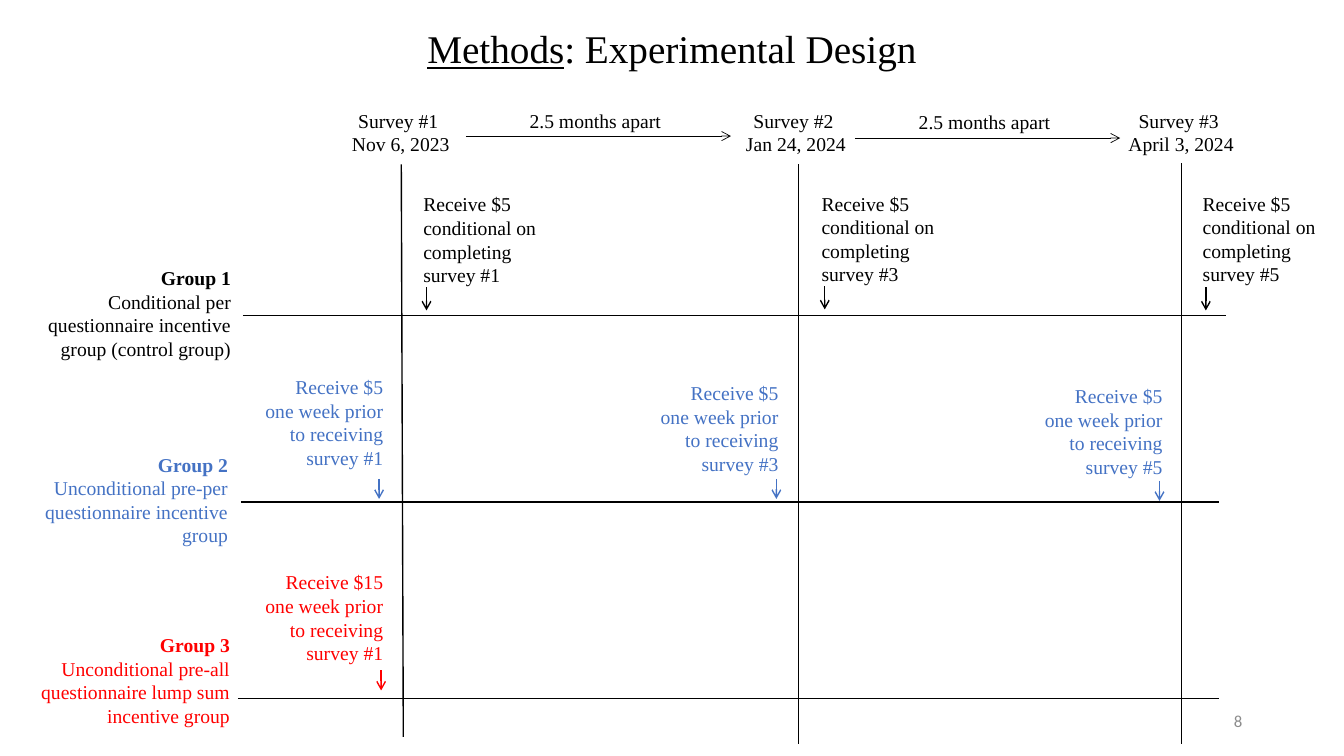
"""Build the experimental design slide: three surveys crossed with three incentive groups."""
from lxml.etree import SubElement
from pptx import Presentation
from pptx.dml.color import RGBColor
from pptx.enum.shapes import MSO_CONNECTOR as Connector
from pptx.enum.text import MSO_ANCHOR as Anchor, MSO_AUTO_SIZE as AutoSize, PP_ALIGN as Align
from pptx.oxml.ns import qn
from pptx.util import Inches, Pt

BLACK = RGBColor(0x00, 0x00, 0x00)
BLUE = RGBColor(0x44, 0x72, 0xC4)
RED = RGBColor(0xFF, 0x00, 0x00)
GRAY = RGBColor(0x8C, 0x8C, 0x8C)
SERIF = "Times New Roman"

SURVEYS = [
    ("Survey #1 ", "Nov 6, 2023", 3.29, 1.37, (4, 7.31), (3.98, 1.63)),
    ("Survey #2 ", "Jan 24, 2024", 7.21, 1.37, (7.92, 7.38), (7.92, 1.63)),
    ("Survey #3 ", "April 3, 2024", 10.95, 1.53, (11.72, 7.38), (11.72, 1.62)),
]
GROUPS = [
    ("Group 1", "Conditional per questionnaire incentive group (control group)",
     BLACK, (-0.01, 2.59), 2.4, (2.41, 12.16, 3.13)),
    ("Group 2", "Unconditional pre-per questionnaire incentive group",
     BLUE, (0.01, 4.44), 2.35, (2.39, 12.09, 4.98)),
    ("Group 3", "Unconditional pre-all questionnaire lump sum incentive group",
     RED, (-0.02, 6.23), 2.4, (2.36, 12.09, 6.93)),
]
INTERVALS = [(5.12, 1.03, 4.62, 1.35), (8.98, 1.04, 8.48, 1.37)]
CONDITIONAL = [(1, 4.1, 1.86, 4.23, 2.85), (3, 8.05, 1.85, 8.18, 2.84), (5, 11.83, 1.85, 11.96, 2.85)]
PREPAID = [
    ("$5", 1, BLUE, 2.53, 3.67, 3.76, 4.75),
    ("$5", 3, BLUE, 6.45, 3.73, 7.7, 4.75),
    ("$5", 5, BLUE, 10.26, 3.76, 11.5, 4.77),
    ("$15", 1, RED, 2.53, 5.61, 3.78, 6.65),
]


def place(shape, left, top, width, height):
    shape.left, shape.top = Inches(left), Inches(top)
    shape.width, shape.height = Inches(width), Inches(height)


def add_run(paragraph, text, size=14, color=BLACK, font=SERIF, bold=False, underline=False):
    run = paragraph.add_run()
    run.text = text
    run.font.size, run.font.name = Pt(size), font
    run.font.bold, run.font.underline = bold, underline
    run.font.color.rgb = color


def add_text(slide, left, top, width, height, lines, align, **style):
    box = slide.shapes.add_textbox(Inches(left), Inches(top), Inches(width), Inches(height))
    frame = box.text_frame
    frame.word_wrap = True
    for index, line in enumerate(lines):
        paragraph = frame.add_paragraph() if index else frame.paragraphs[0]
        paragraph.alignment = align
        add_run(paragraph, line, **style)
    return frame


def add_line(slide, start, end, color=BLACK, width=1, arrow=False):
    line = slide.shapes.add_connector(Connector.STRAIGHT, *map(Inches, (*start, *end)))
    line.line.color.rgb, line.line.width = color, Pt(width)
    properties = line.line._get_or_add_ln()
    if arrow:
        SubElement(properties, qn("a:tailEnd"), type="arrow")
    SubElement(properties.getparent(), qn("a:effectLst"))


def add_title(slide):
    title = slide.shapes.title
    place(title, 0, 0.19, 13.33, 0.57)
    frame = title.text_frame
    frame.auto_size, frame.vertical_anchor = AutoSize.NONE, Anchor.TOP
    paragraph = frame.paragraphs[0]
    paragraph.alignment = Align.CENTER
    add_run(paragraph, "Methods", size=28, underline=True)
    add_run(paragraph, ": Experimental Design", size=28)


def add_survey(slide, name, date, left, width, bottom, top):
    add_line(slide, bottom, top)
    add_text(slide, left, 1.03, width, 0.57, [name, date], Align.CENTER)


def add_group(slide, name, description, color, corner, width, axis):
    frame = add_text(slide, *corner, width, 1.04, [name, description], Align.RIGHT, color=color)
    frame.paragraphs[0].runs[0].font.bold = True
    start, end, height = axis
    add_line(slide, (start, height), (end, height))


def add_interval(slide, left, top, arrow_left, arrow_top):
    add_text(slide, left, top, 1.57, 0.34, ["2.5 months apart"], Align.CENTER)
    add_line(slide, (arrow_left, arrow_top), (arrow_left + 2.63, arrow_top), width=0.5, arrow=True)


def add_payment(slide, text, color, align, left, top, arrow_x, arrow_top, arrow_length):
    add_text(slide, left, top, 1.37, 1.04, [text], align, color=color)
    add_line(slide, (arrow_x, arrow_top), (arrow_x, arrow_top + arrow_length), color, arrow=True)


def main():
    presentation = Presentation()
    presentation.slide_width, presentation.slide_height = Inches(13.33), Inches(7.5)
    slide = presentation.slides.add_slide(presentation.slide_layouts[5])
    add_title(slide)
    for survey in SURVEYS:
        add_survey(slide, *survey)
    for group in GROUPS:
        add_group(slide, *group)
    for interval in INTERVALS:
        add_interval(slide, *interval)
    for number, *position in CONDITIONAL:
        text = f"Receive $5 conditional on completing survey #{number}"
        add_payment(slide, text, BLACK, Align.LEFT, *position, 0.23)
    for amount, number, color, *position in PREPAID:
        text = f"Receive {amount} one week prior to receiving survey #{number}"
        add_payment(slide, text, color, Align.RIGHT, *position, 0.2)
    page = add_text(slide, 9.42, 6.95, 3, 0.4, ["8"], Align.RIGHT, size=12, color=GRAY, font="Calibri")
    page.vertical_anchor = Anchor.MIDDLE
    presentation.save("out.pptx")


if __name__ == "__main__":
    main()
